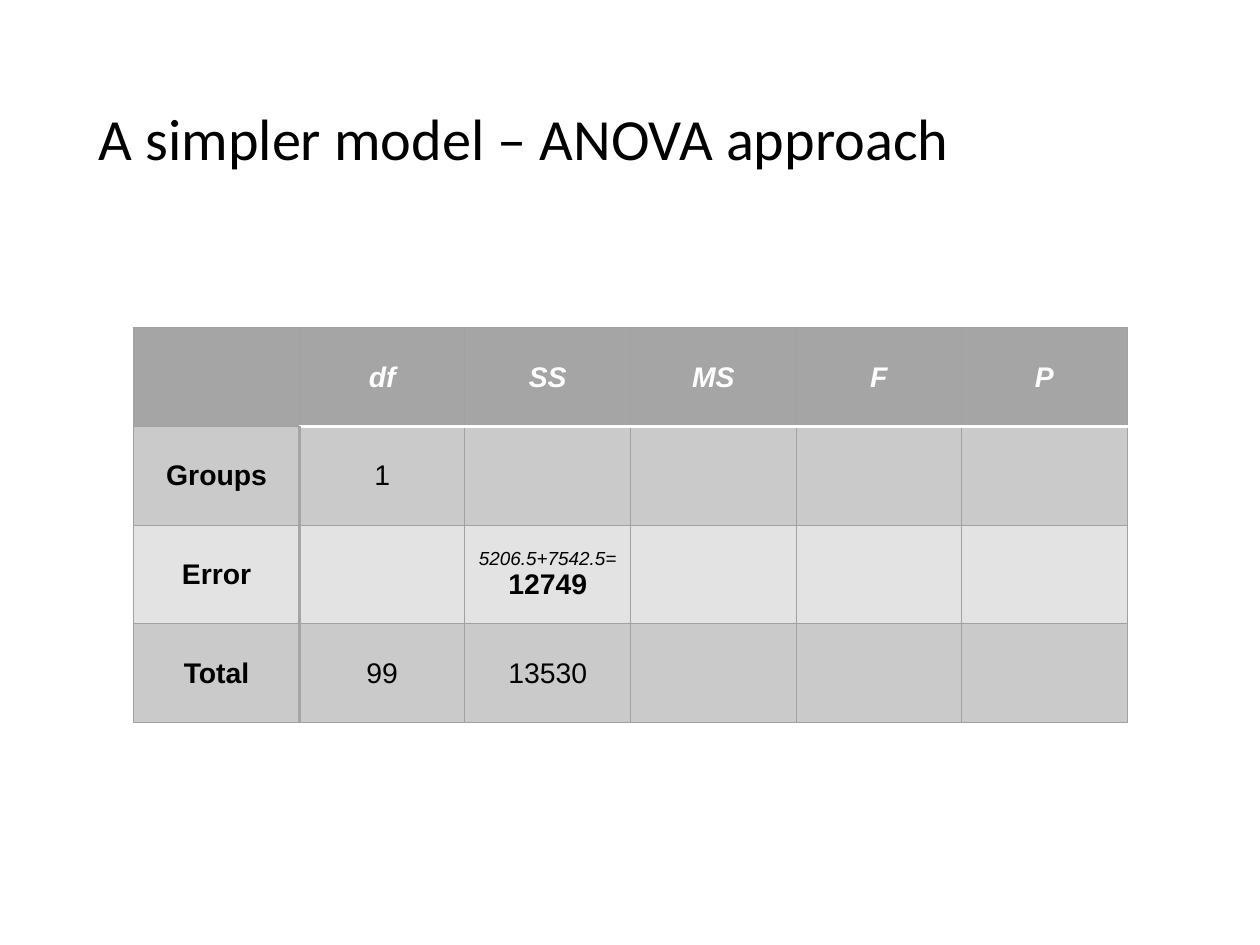
import lxml.etree
import pptx
import pptx.dml.color
import pptx.enum.text
import pptx.oxml.ns
import pptx.util

Inches = pptx.util.Inches
RGBColor = pptx.dml.color.RGBColor
Align = pptx.enum.text.PP_ALIGN
Anchor = pptx.enum.text.MSO_ANCHOR

BLACK = RGBColor(0x00, 0x00, 0x00)
WHITE = RGBColor(0xFF, 0xFF, 0xFF)
HEADER_GRAY = RGBColor(0xA5, 0xA5, 0xA5)
BAND_GRAY = RGBColor(0xCA, 0xCA, 0xCA)
LIGHT_GRAY = RGBColor(0xE3, 0xE3, 0xE3)
BORDER_GRAY = RGBColor(0xA1, 0xA1, 0xA1)

ANOVA_ROWS = [
    ["", "df", "SS", "MS", "F", "P"],
    ["Groups", "1", "", "", "", ""],
    ["Error", "", "", "", "", ""],
    ["Total", "99", "13530", "", "", ""],
]
ROW_FILLS = [HEADER_GRAY, BAND_GRAY, LIGHT_GRAY, BAND_GRAY]
COLUMN_WIDTH = 1.46
ROW_HEIGHT = 0.87


def write_text(paragraph, text, size=18, font="Arial", color=BLACK,
               bold=False, italic=False, align=Align.CENTER):
    paragraph.alignment = align
    run = paragraph.add_run()
    run.text = text
    run.font.size = pptx.util.Pt(size)
    run.font.name = font
    run.font.color.rgb = color
    run.font.bold = bold
    run.font.italic = italic


def set_border(cell, side, color, width):
    properties = cell._tc.get_or_add_tcPr()
    qn = pptx.oxml.ns.qn
    line = lxml.etree.SubElement(properties, qn(f"a:ln{side}"),
                                 w=str(pptx.util.Pt(width)))
    solid = lxml.etree.SubElement(line, qn("a:solidFill"))
    lxml.etree.SubElement(solid, qn("a:srgbClr"), val=str(color))


def format_cell(cell, row, column):
    borders = {side: (BORDER_GRAY, 0.75) for side in "LRTB"}
    if column and row < 2:
        borders["B" if row == 0 else "T"] = (WHITE, 2)
    if row and column < 2:
        borders["R" if column == 0 else "L"] = (HEADER_GRAY, 2)
    for side, (color, width) in borders.items():
        set_border(cell, side, color, width)
    cell.fill.solid()
    cell.fill.fore_color.rgb = ROW_FILLS[row]
    cell.vertical_anchor = Anchor.MIDDLE


def add_title(slide, text):
    title = slide.shapes.title
    title.left, title.top = Inches(0.76), Inches(0.44)
    title.width, title.height = Inches(9.58), Inches(1.61)
    frame = title.text_frame
    frame.auto_size = pptx.enum.text.MSO_AUTO_SIZE.NONE
    frame.vertical_anchor = Anchor.MIDDLE
    frame.margin_left = frame.margin_right = Inches(0.11)
    frame.margin_top = frame.margin_bottom = Inches(0.11)
    heading = frame.paragraphs[0]
    heading.line_spacing = 0.9
    write_text(heading, text, size=37, font="Calibri", align=Align.LEFT)


def add_anova_table(slide):
    row_count, column_count = len(ANOVA_ROWS), len(ANOVA_ROWS[0])
    anova = slide.shapes.add_table(
        row_count, column_count, Inches(1.18), Inches(2.89),
        Inches(COLUMN_WIDTH * column_count), Inches(ROW_HEIGHT * row_count)).table
    for row, labels in enumerate(ANOVA_ROWS):
        for column, label in enumerate(labels):
            cell = anova.cell(row, column)
            format_cell(cell, row, column)
            if label:
                header = row == 0
                write_text(cell.text_frame.paragraphs[0], label,
                           color=WHITE if header else BLACK,
                           bold=header or column == 0, italic=header)
    error_sum = anova.cell(2, 2).text_frame
    write_text(error_sum.paragraphs[0], "5206.5+7542.5=", size=12, italic=True)
    write_text(error_sum.add_paragraph(), "12749", bold=True)


def main():
    deck = pptx.Presentation()
    deck.slide_width, deck.slide_height = Inches(11.11), Inches(8.33)
    slide = deck.slides.add_slide(deck.slide_layouts[5])
    add_title(slide, "A simpler model – ANOVA approach")
    add_anova_table(slide)
    deck.save("out.pptx")


if __name__ == "__main__":
    main()
